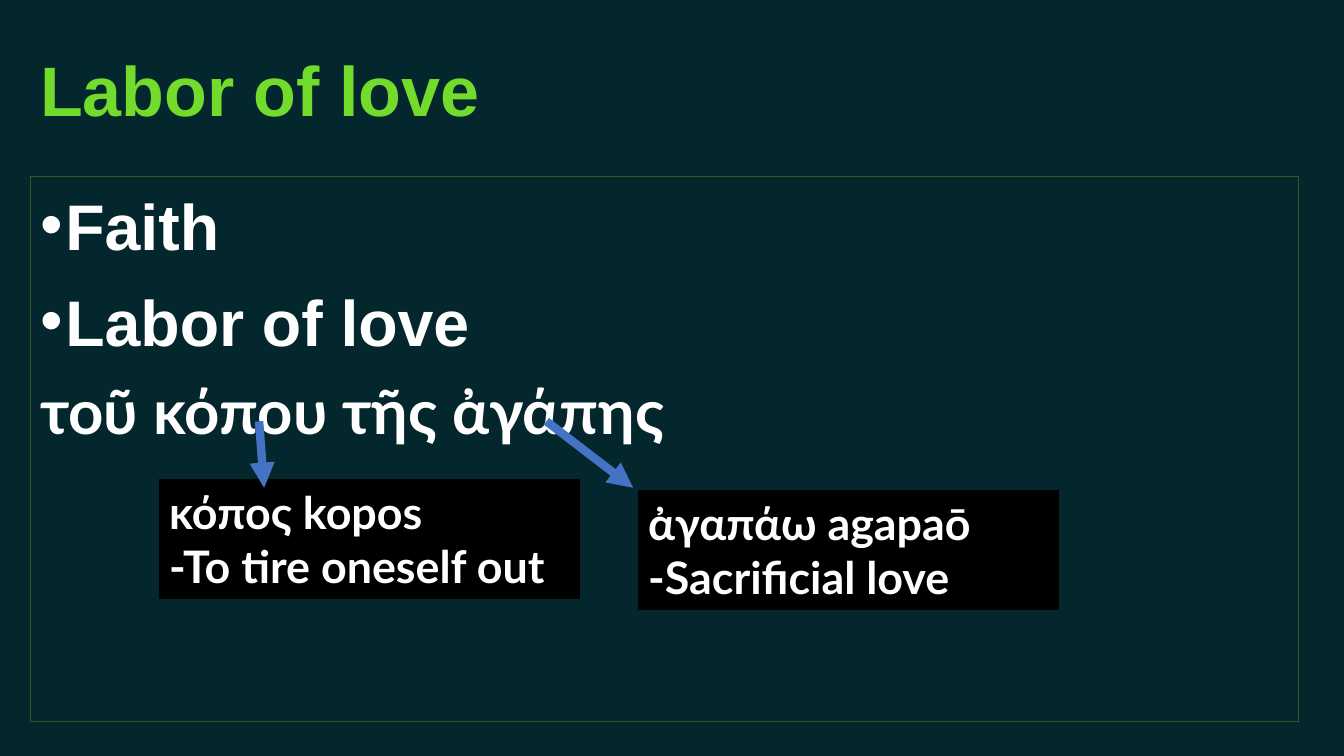
from dataclasses import dataclass

import pptx
import pptx.dml.color
import pptx.enum.shapes
import pptx.enum.text
import pptx.oxml
import pptx.oxml.ns
import pptx.util
from pptx.dml.color import RGBColor

WIDTH = pptx.util.Inches(13.33)
HEIGHT = pptx.util.Inches(7.5)

BACKGROUND = RGBColor(0x03, 0x27, 0x2D)
TITLE_GREEN = RGBColor(0x72, 0xDB, 0x2B)
FRAME_GREEN = RGBColor(0x38, 0x57, 0x23)
ARROW_BLUE = RGBColor(0x44, 0x72, 0xC4)
BLACK = RGBColor(0x00, 0x00, 0x00)
WHITE = RGBColor(0xFF, 0xFF, 0xFF)

# Positions and sizes are percentages of the slide's width and height.
MARGIN, CONTENT_WIDTH = 2.25, 94.37
NOTE_WIDTH, NOTE_HEIGHT = 31.28, 15.73
WORD_LINE = 55.73
ARROW_END = 64.53


@dataclass
class Line:
    text: str
    size: float
    font: str
    color: RGBColor = WHITE
    bullet: bool = False
    before: float = 0
    spacing: float = 1.0


@dataclass
class WordNote:
    left: float
    top: float
    word: str
    meaning: str
    arrow_from: float
    arrow_to: float


BODY = [
    Line("Faith", 46, "Arial", bullet=True, spacing=1.06),
    Line("Labor of love", 46, "Arial", bullet=True, before=10, spacing=1.06),
    Line("τοῦ κόπου τῆς ἀγάπης", 44, "Lato", before=10),
]
NOTES = [
    WordNote(11.85, 63.47, "κόπος kopos", "-To tire oneself out", 19.28, 19.65),
    WordNote(47.49, 64.93, "ἀγαπάω agapaō", "-Sacrificial love", 40.66, 47.11),
]


def across(share: float) -> int:
    return round(WIDTH * share / 100)


def down(share: float) -> int:
    return round(HEIGHT * share / 100)


def add_child(parent, tag: str, **attributes: str) -> None:
    child = pptx.oxml.parse_xml(f"<a:{tag} {pptx.oxml.ns.nsdecls('a')}/>")
    for name, value in attributes.items():
        child.set(name, value)
    parent.append(child)


def write(box, lines: list[Line]) -> None:
    frame = box.text_frame
    frame.word_wrap = True
    for index, line in enumerate(lines):
        para = frame.paragraphs[0] if index == 0 else frame.add_paragraph()
        para.text = line.text
        para.alignment = pptx.enum.text.PP_ALIGN.LEFT
        para.line_spacing = line.spacing
        para.space_before = pptx.util.Pt(line.before)
        if line.bullet:
            properties = para._p.get_or_add_pPr()
            indent = pptx.util.Inches(0.25)
            properties.set("marL", str(indent))
            properties.set("indent", str(-indent))
            add_child(properties, "buFont", typeface="Arial")
            add_child(properties, "buChar", char="•")
        para.font.name = line.font
        para.font.size = pptx.util.Pt(line.size)
        para.font.bold = True
        para.font.color.rgb = line.color


def add_panel(page, left: float, top: float, width: float, height: float,
              lines: list[Line], border: RGBColor, weight: float,
              fill: RGBColor | None = None):
    box = page.shapes.add_shape(
        pptx.enum.shapes.MSO_SHAPE.RECTANGLE,
        across(left), down(top), across(width), down(height))
    box.shadow.inherit = False
    if fill is None:
        box.fill.background()
    else:
        box.fill.solid()
        box.fill.fore_color.rgb = fill
    box.line.color.rgb = border
    box.line.width = pptx.util.Pt(weight)
    box.text_frame.vertical_anchor = pptx.enum.text.MSO_ANCHOR.TOP
    write(box, lines)
    return box


def add_arrow(page, start: float, end: float) -> None:
    arrow = page.shapes.add_connector(
        pptx.enum.shapes.MSO_CONNECTOR.STRAIGHT,
        across(start), down(WORD_LINE), across(end), down(ARROW_END))
    arrow.line.color.rgb = ARROW_BLUE
    arrow.line.width = pptx.util.Pt(6)
    add_child(arrow.line._get_or_add_ln(), "tailEnd", type="triangle")
    add_child(arrow._element.spPr, "effectLst")


def add_note(page, note: WordNote) -> None:
    lines = [Line(text, 32, "Lato") for text in (note.word, note.meaning)]
    box = add_panel(page, note.left, note.top, NOTE_WIDTH, NOTE_HEIGHT,
                    lines, BLACK, 1, BLACK)
    box.text_frame.auto_size = pptx.enum.text.MSO_AUTO_SIZE.SHAPE_TO_FIT_TEXT
    add_arrow(page, note.arrow_from, note.arrow_to)


def main() -> None:
    deck = pptx.Presentation()
    deck.slide_width, deck.slide_height = WIDTH, HEIGHT
    page = deck.slides.add_slide(deck.slide_layouts[6])
    page.background.fill.solid()
    page.background.fill.fore_color.rgb = BACKGROUND

    # Title
    title = page.shapes.add_textbox(
        across(MARGIN), down(2), across(CONTENT_WIDTH), down(19.33))
    title.text_frame.vertical_anchor = pptx.enum.text.MSO_ANCHOR.MIDDLE
    write(title, [Line("Labor of love", 50, "Arial", TITLE_GREEN)])

    # Framed body text
    add_panel(page, MARGIN, 23.33, CONTENT_WIDTH, 72.13, BODY, FRAME_GREEN, 0.75)

    # Word notes with their arrows
    for note in NOTES:
        add_note(page, note)

    deck.save("out.pptx")


if __name__ == "__main__":
    main()
